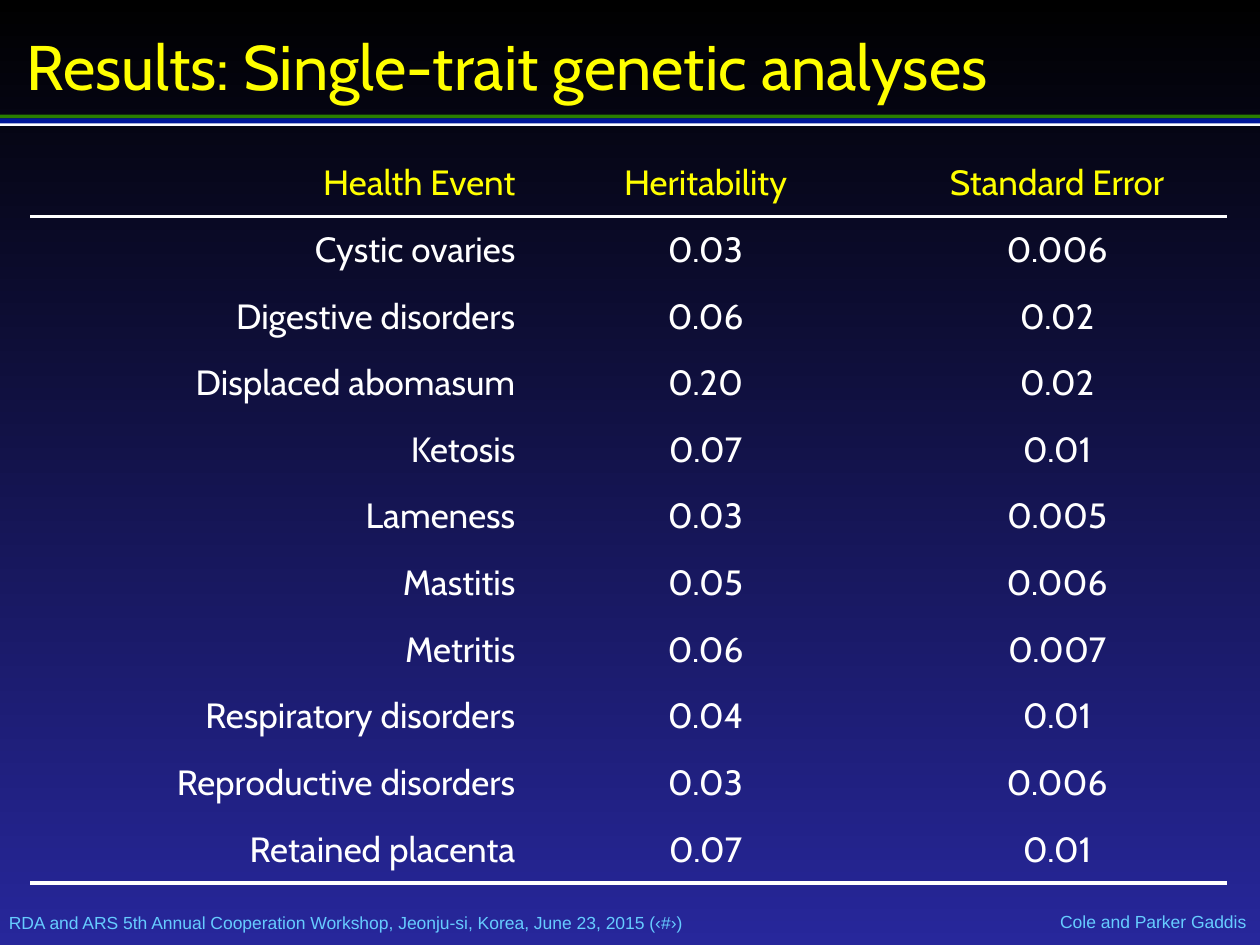
from lxml.etree import SubElement
from pptx import Presentation
from pptx.dml.color import RGBColor
from pptx.enum.shapes import MSO_SHAPE
from pptx.enum.text import MSO_ANCHOR, PP_ALIGN as ALIGN
from pptx.oxml.ns import qn
from pptx.util import Inches, Pt

COLORS = {"top": "000000", "bottom": "27279B", "heading": "FFFF00",
          "body": "FFFFFF", "footer": "66CCFF", "green": "2A7E00",
          "blue": "001799", "white": "FFFFFF"}
TITLE = "Results: Single-trait genetic analyses"
RESULTS = [
    ("Health Event", "Heritability", "Standard Error"),
    ("Cystic ovaries", "0.03", "0.006"),
    ("Digestive disorders", "0.06", "0.02"),
    ("Displaced abomasum", "0.20", "0.02"),
    ("Ketosis", "0.07", "0.01"),
    ("Lameness", "0.03", "0.005"),
    ("Mastitis", "0.05", "0.006"),
    ("Metritis", "0.06", "0.007"),
    ("Respiratory disorders", "0.04", "0.01"),
    ("Reproductive disorders", "0.03", "0.006"),
    ("Retained placenta", "0.07", "0.01"),
]
COLUMNS = [(3.92, ALIGN.RIGHT), (2.88, ALIGN.CENTER), (2.7, ALIGN.CENTER)]
ROW_HEIGHT = 5.82 / len(RESULTS)
FOOTERS = [  # text, left, top, width, alignment
    ("Cole and Parker Gaddis", 8, 7.23, 1.89, ALIGN.RIGHT),
    ("RDA and ARS 5th Annual Cooperation Workshop, Jeonju-si, Korea, "
     "June 23, 2015 (‹#›)", 0.07, 7.24, 8.09, ALIGN.LEFT),
]
STRIPES = [("green", 0.91, 0.03), ("white", 0.97, 0.03), ("blue", 0.94, 0.04)]
NO_STYLE_NO_GRID = "{2D5ABB26-0587-4C30-8999-92F81FD0307C}"


def rgb(name):
    return RGBColor.from_string(COLORS[name])


def format_text(paragraph, font_name, size, color, align):
    paragraph.alignment = align
    font = paragraph.font
    font.name, font.size = font_name, Pt(size)
    font.color.rgb = rgb(color)


def set_margins(holder, horizontal, vertical):
    holder.margin_left = holder.margin_right = Inches(horizontal)
    holder.margin_top = holder.margin_bottom = Inches(vertical)


def underline_cell(cell):
    """Draw a white rule along the bottom edge of a cell."""
    props = cell._tc.get_or_add_tcPr()
    rule = SubElement(props, qn("a:lnB"), w=str(Pt(2.25)))
    props.insert(0, rule)
    fill = SubElement(rule, qn("a:solidFill"))
    SubElement(fill, qn("a:srgbClr"), val=COLORS["white"])


def add_footer(slide, text, left, top, width, align):
    frame = slide.shapes.add_textbox(
        Inches(left), Inches(top), Inches(width), Inches(0.17)).text_frame
    frame.word_wrap = True
    frame.vertical_anchor = MSO_ANCHOR.MIDDLE
    set_margins(frame, 0, 0)
    line = frame.paragraphs[0]
    line.text = text
    line.space_before = Pt(6)
    format_text(line, "Arial", 10, "footer", align)


def add_stripe(slide, color, top, height):
    stripe = slide.shapes.add_shape(
        MSO_SHAPE.RECTANGLE, 0, Inches(top), Inches(10), Inches(height))
    stripe.shadow.inherit = False
    stripe.fill.solid()
    stripe.fill.fore_color.rgb = rgb(color)
    stripe.line.fill.background()


def format_title(title):
    title.left, title.top = Inches(0.16), Inches(0.15)
    title.width, title.height = Inches(9.65), Inches(0.73)
    frame = title.text_frame
    frame.text = TITLE
    frame.vertical_anchor = MSO_ANCHOR.MIDDLE
    set_margins(frame, 0.05, 0.05)
    format_text(frame.paragraphs[0], "Cabin", 36, "heading", ALIGN.LEFT)


def add_results(slide):
    total_width = sum(width for width, _ in COLUMNS)
    table = slide.shapes.add_table(
        len(RESULTS), len(COLUMNS), Inches(0.24), Inches(1.19),
        Inches(total_width), Inches(ROW_HEIGHT * len(RESULTS))).table
    table._tbl.tblPr.find(qn("a:tableStyleId")).text = NO_STYLE_NO_GRID
    table.horz_banding = table.first_row = False
    for column, (width, _) in zip(table.columns, COLUMNS):
        column.width = Inches(width)
    for r, values in enumerate(RESULTS):
        for c, value in enumerate(values):
            cell = table.cell(r, c)
            cell.text = value
            cell.vertical_anchor = MSO_ANCHOR.MIDDLE
            set_margins(cell, 0.07, 0)
            cell.fill.background()
            format_text(cell.text_frame.paragraphs[0], "Cabin", 20,
                        "body" if r else "heading", COLUMNS[c][1])
            if r in (0, len(RESULTS) - 1):
                underline_cell(cell)


def main():
    deck = Presentation()
    deck.slide_width, deck.slide_height = Inches(10), Inches(7.5)
    slide = deck.slides.add_slide(deck.slide_layouts[5])
    backdrop = slide.background.fill
    backdrop.gradient()
    backdrop.gradient_angle = 270
    for stop, color in zip(backdrop.gradient_stops, ("top", "bottom")):
        stop.color.rgb = rgb(color)
    format_title(slide.shapes.title)
    for footer in FOOTERS:
        add_footer(slide, *footer)
    for stripe in STRIPES:
        add_stripe(slide, *stripe)
    add_results(slide)
    deck.save("out.pptx")


if __name__ == "__main__":
    main()
